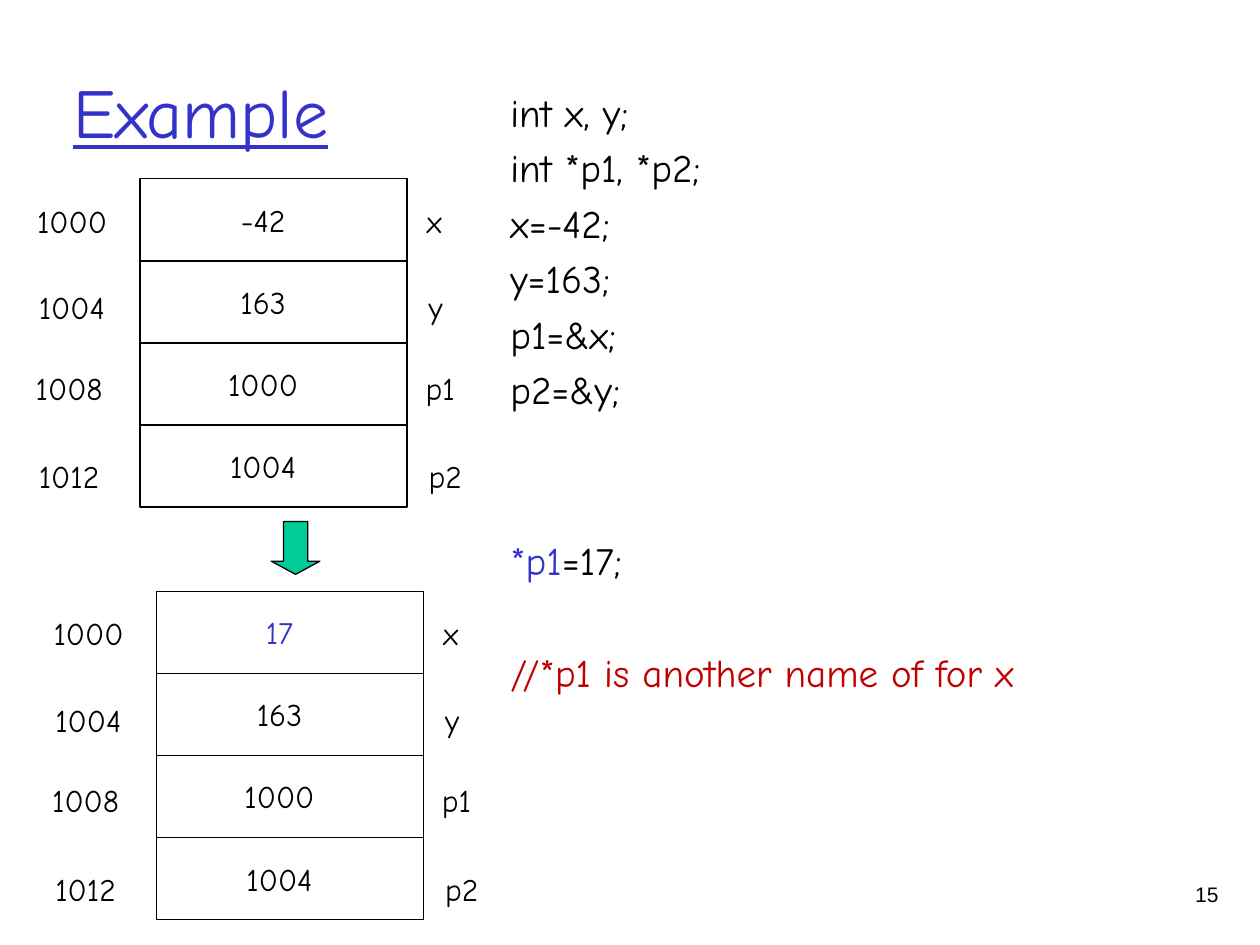
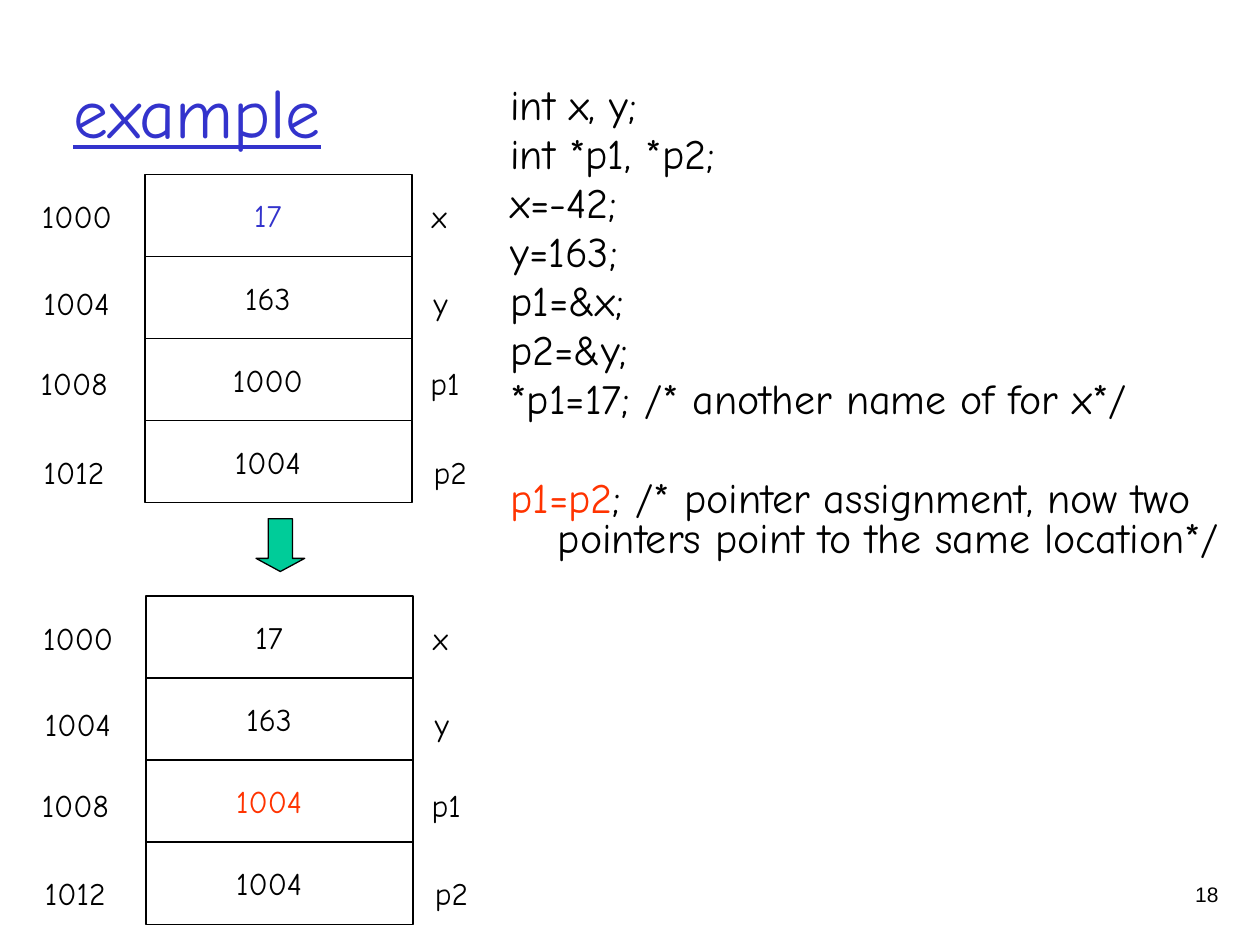
from dataclasses import dataclass

from pptx import Presentation
from pptx.dml.color import RGBColor
from pptx.enum.shapes import MSO_SHAPE
from pptx.enum.text import MSO_ANCHOR, PP_ALIGN
from pptx.util import Pt


@dataclass(frozen=True)
class Theme:
    black: RGBColor = RGBColor(0x00, 0x00, 0x00)
    blue: RGBColor = RGBColor(0x33, 0x33, 0xCC)
    red: RGBColor = RGBColor(0xC0, 0x00, 0x00)
    orange: RGBColor = RGBColor(0xFF, 0x33, 0x00)
    green: RGBColor = RGBColor(0x00, 0xCC, 0x99)
    font: str = "Comic Neue"
    number_font: str = "Arial"
    title_size: float = 40
    memory_size: float = 18
    number_size: float = 12
    line_width: float = 0.75


THEME = Theme()
TITLE_BOX = (41.8, 18, 612, 90)
CODE_BOX = (291.6, 50.4, 409.7, 415.4)
NUMBER_BOX = (643, 504, 53.3, 20.9)
CELL_WIDTH, CELL_HEIGHT = 152.6, 46.9
VALUE_WIDTH, VALUE_HEIGHT = 60, 32.4
LABEL_WIDTH, LABEL_HEIGHT = 55.4, 32.4
ADDRESS_LEFT, NAME_LEFT = -62.4, 160.4
ARROW_SIZE = (27.8, 30.2)
CODE_SPACING = 5

ADDRESSES = ("1000", "1004", "1008", "1012")
VARIABLES = ("x", "y", "p1", "p2")
LABEL_OFFSETS = ((0, 9.4), (1, 59), (-0.8, 105), (1, 155.6))
DECLARATIONS = ("int x, y;", "int *p1, *p2;", "x=-42;", "y=163;", "p1=&x;", "p2=&y;")


def add_text_box(slide, box, insets=(0, 0, 0, 0), anchor=MSO_ANCHOR.TOP):
    """Add a wrapping text box; insets run left, top, right, bottom."""
    frame = slide.shapes.add_textbox(*map(Pt, box)).text_frame
    frame.word_wrap = True
    frame.vertical_anchor = anchor
    frame.margin_left, frame.margin_top, frame.margin_right, frame.margin_bottom = map(Pt, insets)
    return frame


def add_run(paragraph, text, size, color=THEME.black, font=THEME.font, underline=None):
    run = paragraph.add_run()
    run.text = text
    run.font.name = font
    run.font.size = Pt(size)
    run.font.color.rgb = color
    run.font.underline = underline


def add_title(slide, text):
    frame = add_text_box(slide, TITLE_BOX, anchor=MSO_ANCHOR.MIDDLE)
    add_run(frame.paragraphs[0], text, THEME.title_size, THEME.blue, underline=True)


def add_slide_number(slide, number):
    paragraph = add_text_box(slide, NUMBER_BOX).paragraphs[0]
    paragraph.alignment = PP_ALIGN.RIGHT
    add_run(paragraph, str(number), THEME.number_size, font=THEME.number_font)


def add_code(slide, box, lines, size, hanging, line_spacing=None):
    """Write code lines, each a gap above and a list of (text, color) runs."""
    frame = add_text_box(slide, box)
    for index, (gap, runs) in enumerate(lines):
        paragraph = frame.add_paragraph() if index else frame.paragraphs[0]
        paragraph.space_before = Pt(gap)
        paragraph.line_spacing = line_spacing
        properties = paragraph._p.get_or_add_pPr()
        properties.set("marL", str(Pt(hanging)))
        properties.set("indent", str(-Pt(hanging)))
        for text, color in runs:
            add_run(paragraph, text, size, color)


def outline(shape):
    shape.shadow.inherit = False
    shape.line.color.rgb = THEME.black
    shape.line.width = Pt(THEME.line_width)


def add_memory_cell(slide, left, top, value, color):
    cell = slide.shapes.add_shape(
        MSO_SHAPE.RECTANGLE, Pt(left), Pt(top), Pt(CELL_WIDTH), Pt(CELL_HEIGHT))
    cell.fill.background()
    outline(cell)
    value_box = (left + (CELL_WIDTH - VALUE_WIDTH) / 2,
                 top + (CELL_HEIGHT - VALUE_HEIGHT) / 2, VALUE_WIDTH, VALUE_HEIGHT)
    frame = add_text_box(slide, value_box, (0, 0, 12, 0), MSO_ANCHOR.MIDDLE)
    frame.paragraphs[0].alignment = PP_ALIGN.CENTER
    add_run(frame.paragraphs[0], value, THEME.memory_size, color)


def add_memory(slide, left, top, values, highlights):
    """Draw four cells with addresses and names; highlights maps a row to a color."""
    for row, value in enumerate(values):
        add_memory_cell(slide, left, top + row * CELL_HEIGHT, value,
                        highlights.get(row, THEME.black))
    for address, variable, (shift, down) in zip(ADDRESSES, VARIABLES, LABEL_OFFSETS):
        for label, label_left in ((address, ADDRESS_LEFT), (variable, NAME_LEFT)):
            box = (left + label_left + shift, top + down, LABEL_WIDTH, LABEL_HEIGHT)
            frame = add_text_box(slide, box, (3.6,) * 4)
            add_run(frame.paragraphs[0], label, THEME.memory_size)


def add_step_arrow(slide, left, top):
    arrow = slide.shapes.add_shape(
        MSO_SHAPE.DOWN_ARROW, Pt(left), Pt(top), *map(Pt, ARROW_SIZE))
    arrow.adjustments[0] = 0.5
    arrow.adjustments[1] = 0.27
    arrow.fill.solid()
    arrow.fill.fore_color.rgb = THEME.green
    outline(arrow)


def add_example_slide(presentation, title, number, code, before, after, arrow):
    slide = presentation.slides.add_slide(presentation.slide_layouts[6])
    add_slide_number(slide, number)
    add_title(slide, title)
    add_code(slide, CODE_BOX, **code)
    add_memory(slide, *before)
    add_memory(slide, *after)
    add_step_arrow(slide, *arrow)


def main():
    presentation = Presentation()
    presentation.slide_width, presentation.slide_height = Pt(720), Pt(540)
    declarations = [(CODE_SPACING, [(text, THEME.black)]) for text in DECLARATIONS]

    write_through_pointer = declarations + [
        (70.4, [("*p1", THEME.blue), ("=17;", THEME.black)]),
        (37.8, [("//*p1 is another name of for x", THEME.red)]),
    ]
    add_example_slide(
        presentation, "Example", 15,
        code=dict(lines=write_through_pointer, size=22.3, hanging=25.2),
        before=(80, 102.2, ("-42", "163", "1000", "1004"), {}),
        after=(89.4, 337.8, ("17", "163", "1000", "1004"), {0: THEME.blue}),
        arrow=(155, 298))

    assign_pointer = declarations + [
        (CODE_SPACING, [("*p1=17; /* another name of for x*/", THEME.black)]),
        (33.4, [("p1=p2", THEME.orange),
                ("; /* pointer assignment, now two pointers point to the same location*/",
                 THEME.black)]),
    ]
    add_example_slide(
        presentation, "example", 18,
        code=dict(lines=assign_pointer, size=24, hanging=27.2, line_spacing=0.8),
        before=(82.8, 99.6, ("17", "163", "1000", "1004"), {0: THEME.blue}),
        after=(83.5, 340.5, ("17", "163", "1004", "1004"), {2: THEME.orange}),
        arrow=(146.3, 296.4))

    presentation.save("out.pptx")


if __name__ == "__main__":
    main()
